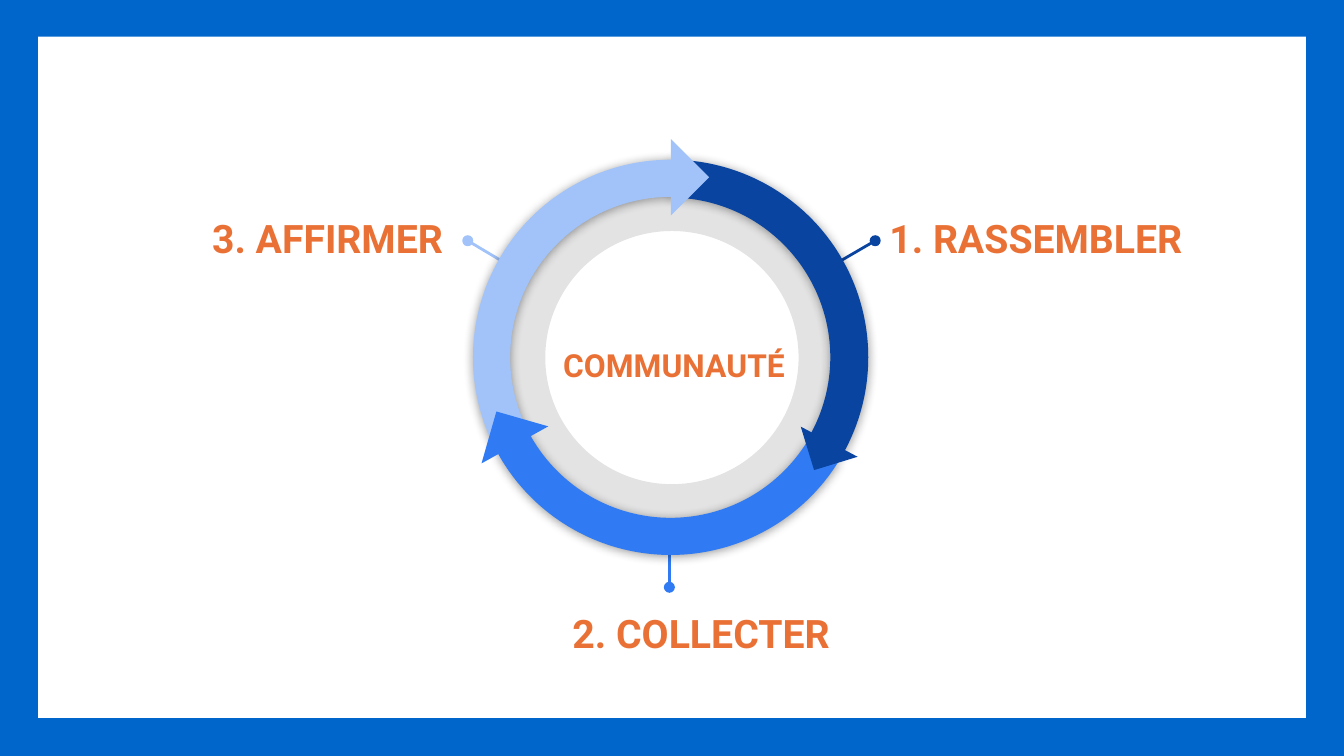
"""Build a slide showing a three-step community cycle."""
from lxml import etree
from pptx import Presentation
from pptx.dml.color import RGBColor
from pptx.enum.shapes import MSO_CONNECTOR, MSO_SHAPE
from pptx.enum.text import MSO_ANCHOR, PP_ALIGN
from pptx.oxml.ns import qn
from pptx.util import Cm, Pt

STRAIGHT = MSO_CONNECTOR.STRAIGHT
FRAME, DONUT = MSO_SHAPE.FRAME, MSO_SHAPE.DONUT
ARC, TRIANGLE = MSO_SHAPE.BLOCK_ARC, MSO_SHAPE.RIGHT_TRIANGLE
TOP, MIDDLE = MSO_ANCHOR.TOP, MSO_ANCHOR.MIDDLE
LEFT, CENTER = PP_ALIGN.LEFT, PP_ALIGN.CENTER

BORDER = RGBColor(0x00, 0x66, 0xCC)
BLACK = RGBColor(0x00, 0x00, 0x00)
ORANGE = RGBColor(0xE9, 0x71, 0x35)
NAVY = RGBColor(0x09, 0x44, 0xA1)
BLUE = RGBColor(0x30, 0x7B, 0xF3)
SKY = RGBColor(0xA1, 0xC3, 0xFA)

deck = Presentation()
deck.slide_width, deck.slide_height = Cm(25.4), Cm(14.29)
page = deck.slides.add_slide(deck.slide_layouts[6])


def add_filled(kind, left, top, width, height, color, adjustments=(), rotation=0):
    shape = page.shapes.add_shape(kind, Cm(left), Cm(top), Cm(width), Cm(height))
    shape.shadow.inherit = False
    shape.fill.solid()
    shape.fill.fore_color.rgb = color
    shape.line.fill.background()
    shape.rotation = rotation
    for index, value in enumerate(adjustments):
        shape.adjustments[index] = value
    return shape


def add_label(text, left, top, width, height, size, align, anchor):
    box = page.shapes.add_textbox(Cm(left), Cm(top), Cm(width), Cm(height))
    frame = box.text_frame
    frame.word_wrap = True
    frame.vertical_anchor = anchor
    frame.margin_left = frame.margin_right = Cm(0.25)
    frame.margin_top = frame.margin_bottom = Cm(0.25)
    para = frame.paragraphs[0]
    para.alignment = align
    para.line_spacing = 1.15
    span = para.add_run()
    span.text = text
    span.font.name = "Roboto"
    span.font.size = Pt(size)
    span.font.bold = True
    span.font.color.rgb = ORANGE


add_filled(FRAME, 0, -0.02, 25.4, 14.31, BORDER, [0.05])
ring = add_filled(DONUT, 9.17, 3.23, 7.06, 7.06, BLACK, [0.161])
ring_color = ring.fill._xPr.find(qn("a:solidFill"))[0]
etree.SubElement(ring_color, qn("a:alpha"), val="11000")

steps = [
    ("3. AFFIRMER", SKY, (8.84, 4.55, 10.03, 5.26), (3.76, 3.66, 5.05)),
    ("1. RASSEMBLER", NAVY, (16.54, 4.55, 15.32, 5.26), (16.56, 3.66, 6.3)),
    ("2. COLLECTER", BLUE, (12.65, 11.1, 12.65, 9.83), (10.57, 11.13, 6.63)),
]
for text, color, ends, (left, top, width) in steps:
    pointer = page.shapes.add_connector(STRAIGHT, *[Cm(end) for end in ends])
    pointer.line.color.rgb = color
    pointer.line.width = Pt(1.5)
    etree.SubElement(pointer.line._get_or_add_ln(), qn("a:headEnd"), type="oval")
    etree.SubElement(pointer._element.spPr, qn("a:effectLst"))
    add_label(text, left, top, width, 1.85, 21, LEFT, TOP)

add_label("COMMUNAUTÉ", 10.34, 5.72, 4.8, 2.24, 17, CENTER, MIDDLE)

arrows = [
    (NAVY, 30, False, (144.14, 0.01, 0.096), None),
    (SKY, 330, True, (143.49, 214.73, 0.094), (12.17, 2.84, 1.02, 225)),
    (BLUE, 210, True, (143.16, 215.03, 0.094), (15.24, 7.92, 0.86, 342.9)),
]
heads = {
    SKY: (12.17, 2.84, 1.02, 225),
    NAVY: (15.24, 7.92, 0.86, 342.9),
    BLUE: (9.22, 7.9, 1.02, 106),
}
heads_after = {SKY: [SKY], BLUE: [NAVY, BLUE]}
for color, rotation, flipped, adjustments, _ in arrows:
    arc = add_filled(ARC, 8.94, 3.02, 7.47, 7.47, color, adjustments, rotation)
    if flipped:
        arc._element.spPr.find(qn("a:xfrm")).set("flipH", "1")
    shadow = etree.SubElement(
        arc._element.spPr.find(qn("a:effectLst")), qn("a:outerShdw"),
        blurRad=str(Pt(5.6)), dist=str(Pt(0.8)), dir="5400000", rotWithShape="0")
    shade = etree.SubElement(shadow, qn("a:srgbClr"), val=str(BLACK))
    etree.SubElement(shade, qn("a:alpha"), val="40000")
    for head_color in heads_after.get(color, []):
        left, top, side, angle = heads[head_color]
        add_filled(TRIANGLE, left, top, side, side, head_color, rotation=angle)

deck.save("out.pptx")
